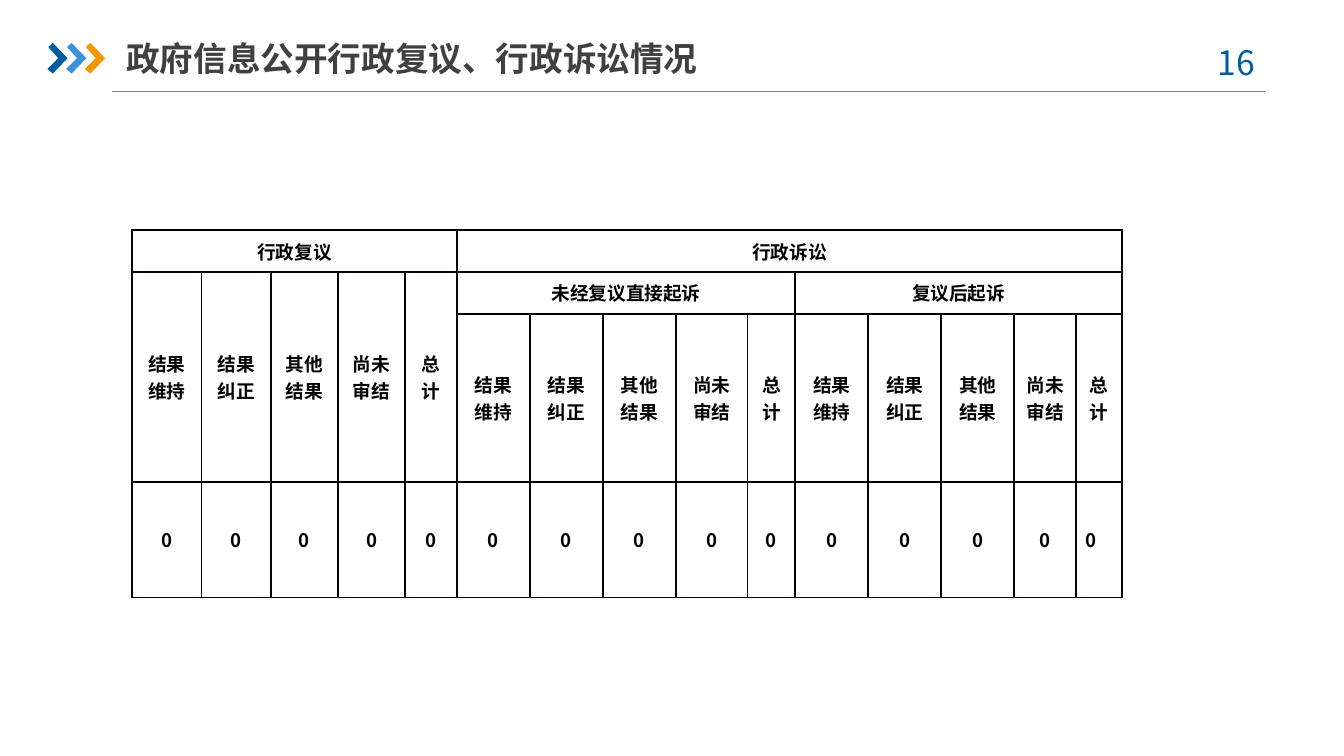
from lxml.etree import SubElement
from pptx import Presentation
from pptx.dml.color import RGBColor
from pptx.enum.shapes import MSO_CONNECTOR
from pptx.enum.text import MSO_ANCHOR, PP_ALIGN
from pptx.oxml.ns import qn
from pptx.util import Pt

# Content
TITLE = "政府信息公开行政复议、行政诉讼情况"
PAGE_NUMBER = "16 "
OUTCOMES = ["结果维持", "结果纠正", "其他结果", "尚未审结", "总计"]
COUNTS = [0] * 15
# text, row, column, rows spanned, columns spanned
HEADINGS = [
    ("行政复议", 0, 0, 1, 5),
    ("行政诉讼", 0, 5, 1, 10),
    ("未经复议直接起诉", 1, 5, 1, 5),
    ("复议后起诉", 1, 10, 1, 5),
]
OUTCOME_GROUPS = [(1, 0, 2), (2, 5, 1), (2, 10, 1)]  # row, column, rows spanned

# Style and sizes in points
FONT = "Noto Sans CJK SC"
COLORS = {"navy": "005DA2", "blue": "3992DB", "orange": "F79600", "title": "404040",
          "rule": "808080", "text": "000000", "border": "080000"}
COLUMN_WIDTHS = [37.2, 37.2, 36, 35.9, 27.8, 39.1, 39.1, 39.1, 38.4, 25.6,
                 39.1, 39.1, 39.1, 33.3, 24.6]
ROW_HEIGHTS = [22.5, 22.5, 90, 62]
CHEVRON = [(0.5, 2.2), (2.9, 0), (10.8, 8.2), (2.9, 16.4), (0, 14), (5.8, 8.2)]
CHEVRON_LEFT, CHEVRON_TOP, CHEVRON_STEP = 25.4, 23, 10.05


def color(name):
    return RGBColor.from_string(COLORS[name])


def write(frame, text, *, size, tint, bold=False, align=PP_ALIGN.LEFT):
    frame.word_wrap = True
    para = frame.paragraphs[0]
    para.alignment = align
    span = para.add_run()
    span.text = text
    font = span.font
    font.size, font.bold, font.name = Pt(size), bold, FONT
    font.color.rgb = color(tint)
    SubElement(font._element, qn("a:ea"), typeface=FONT)


def add_text(page, text, left, top, width, height, *, anchor=MSO_ANCHOR.TOP,
             side_inset=7.2, **style):
    box = page.shapes.add_textbox(Pt(left), Pt(top), Pt(width), Pt(height))
    frame = box.text_frame
    frame.vertical_anchor = anchor
    frame.margin_left = frame.margin_right = Pt(side_inset)
    write(frame, text, **style)


def style_cell(cell):
    properties = cell._tc.get_or_add_tcPr()
    for side in ("lnL", "lnR", "lnT", "lnB"):
        border = SubElement(properties, qn(f"a:{side}"), w=str(Pt(1)))
        fill = SubElement(border, qn("a:solidFill"))
        SubElement(fill, qn("a:srgbClr"), val=COLORS["border"])
    cell.fill.background()
    cell.vertical_anchor = MSO_ANCHOR.MIDDLE
    cell.margin_left = cell.margin_right = Pt(5)
    cell.margin_top = cell.margin_bottom = 0


def add_header(page):
    # Rule below the title
    rule = page.shapes.add_connector(MSO_CONNECTOR.STRAIGHT, Pt(59.8), Pt(49.2), Pt(677.5), Pt(49.2))
    rule.line.color.rgb = color("rule")
    rule.line.width = Pt(0.75)
    SubElement(rule._element.spPr, qn("a:effectLst"))

    # Three chevrons
    for index, tint in enumerate(("navy", "blue", "orange")):
        left = CHEVRON_LEFT + index * CHEVRON_STEP
        points = [(Pt(left + x), Pt(CHEVRON_TOP + y)) for x, y in CHEVRON]
        builder = page.shapes.build_freeform(*points[0])
        builder.add_line_segments(points[1:], close=True)
        chevron = builder.convert_to_shape()
        chevron.shadow.inherit = False
        chevron.fill.solid()
        chevron.fill.fore_color.rgb = color(tint)
        chevron.line.fill.background()

    # Page number and title
    add_text(page, PAGE_NUMBER, 638, 18.7, 52.5, 28.8, size=18, tint="navy", align=PP_ALIGN.CENTER)
    add_text(page, TITLE, 67.7, 15.8, 381.6, 30.2, anchor=MSO_ANCHOR.MIDDLE, side_inset=0,
             size=18, tint="title", bold=True)


def add_case_table(page):
    table = page.shapes.add_table(
        len(ROW_HEIGHTS), len(COLUMN_WIDTHS), Pt(70.7), Pt(123.2),
        Pt(sum(COLUMN_WIDTHS)), Pt(sum(ROW_HEIGHTS))).table
    table.first_row = table.horz_banding = False
    for column, width in zip(table.columns, COLUMN_WIDTHS):
        column.width = Pt(width)
    for row, height in zip(table.rows, ROW_HEIGHTS):
        row.height = Pt(height)
    for cell in table.iter_cells():
        style_cell(cell)

    entries = list(HEADINGS)
    for row, first, rows in OUTCOME_GROUPS:
        entries += [(text, row, first + i, rows, 1) for i, text in enumerate(OUTCOMES)]
    entries += [(str(count), 3, i, 1, 1) for i, count in enumerate(COUNTS)]

    last = (3, len(COUNTS) - 1)  # the final count is left-aligned
    for text, row, column, rows, columns in entries:
        cell = table.cell(row, column)
        if rows * columns > 1:
            cell.merge(table.cell(row + rows - 1, column + columns - 1))
        align = PP_ALIGN.LEFT if (row, column) == last else PP_ALIGN.CENTER
        write(cell.text_frame, text, size=10, tint="text", bold=True, align=align)


def main():
    deck = Presentation()
    deck.slide_width, deck.slide_height = Pt(720), Pt(405)
    page = deck.slides.add_slide(deck.slide_layouts[6])
    add_header(page)
    add_case_table(page)
    deck.save("out.pptx")


if __name__ == "__main__":
    main()
